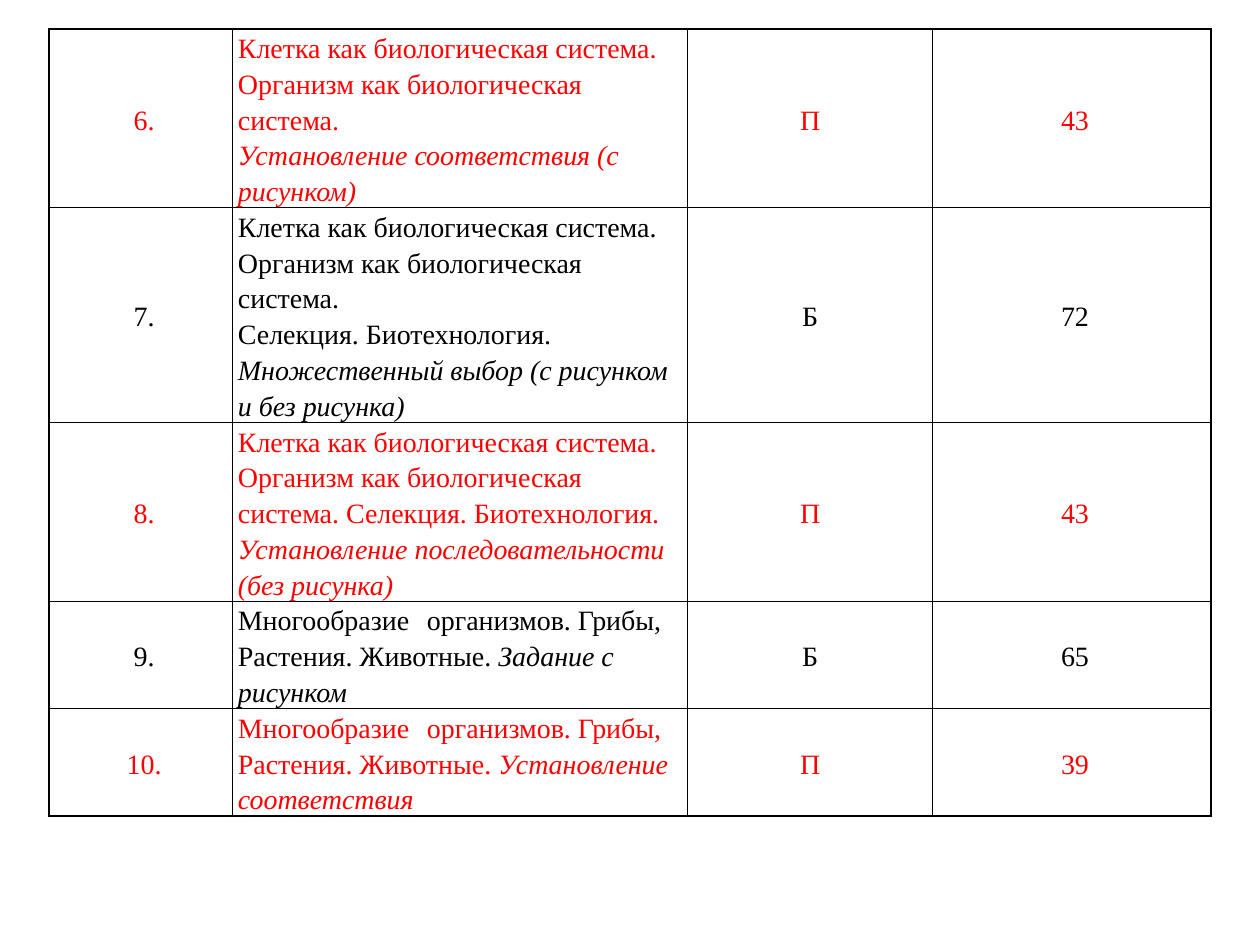
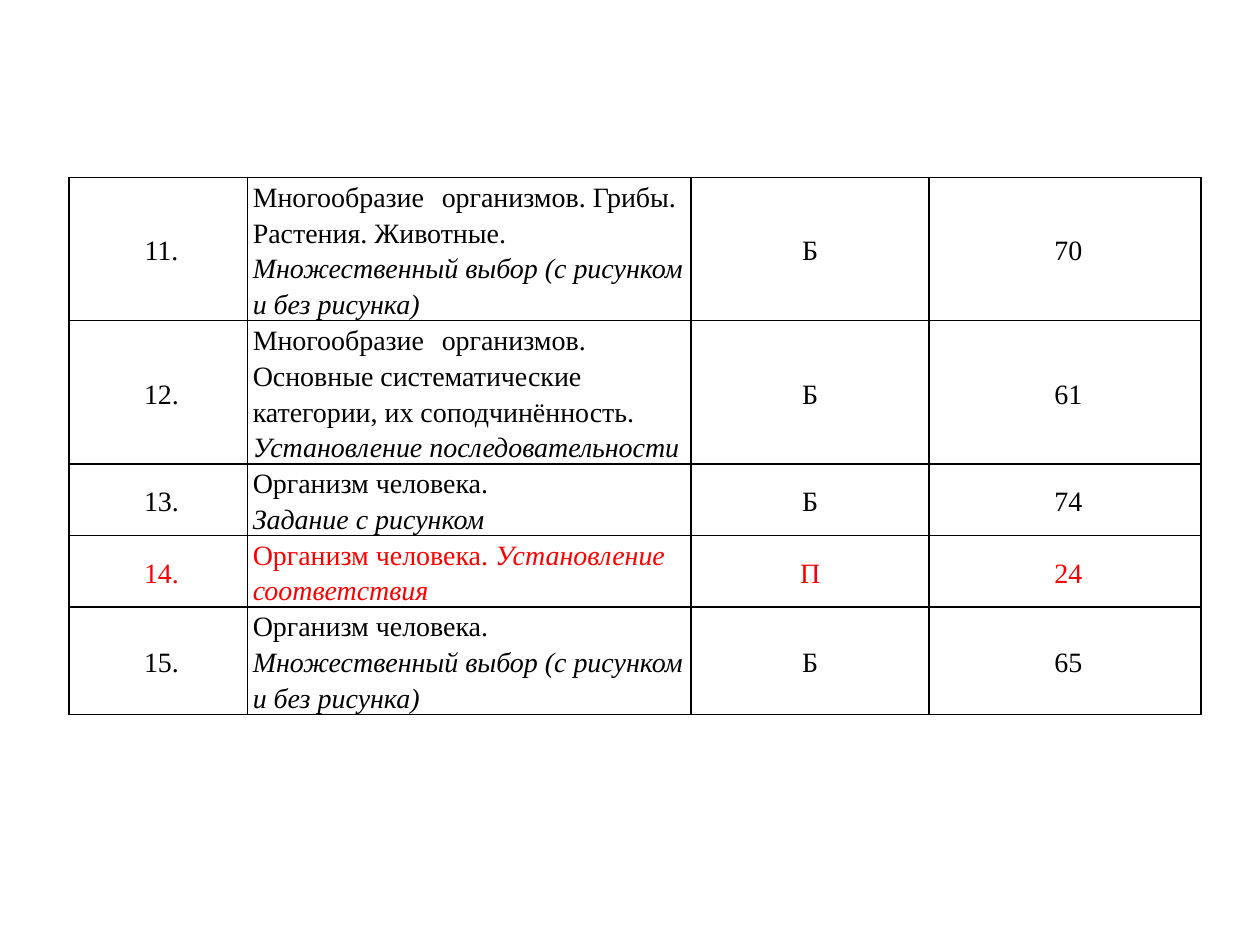
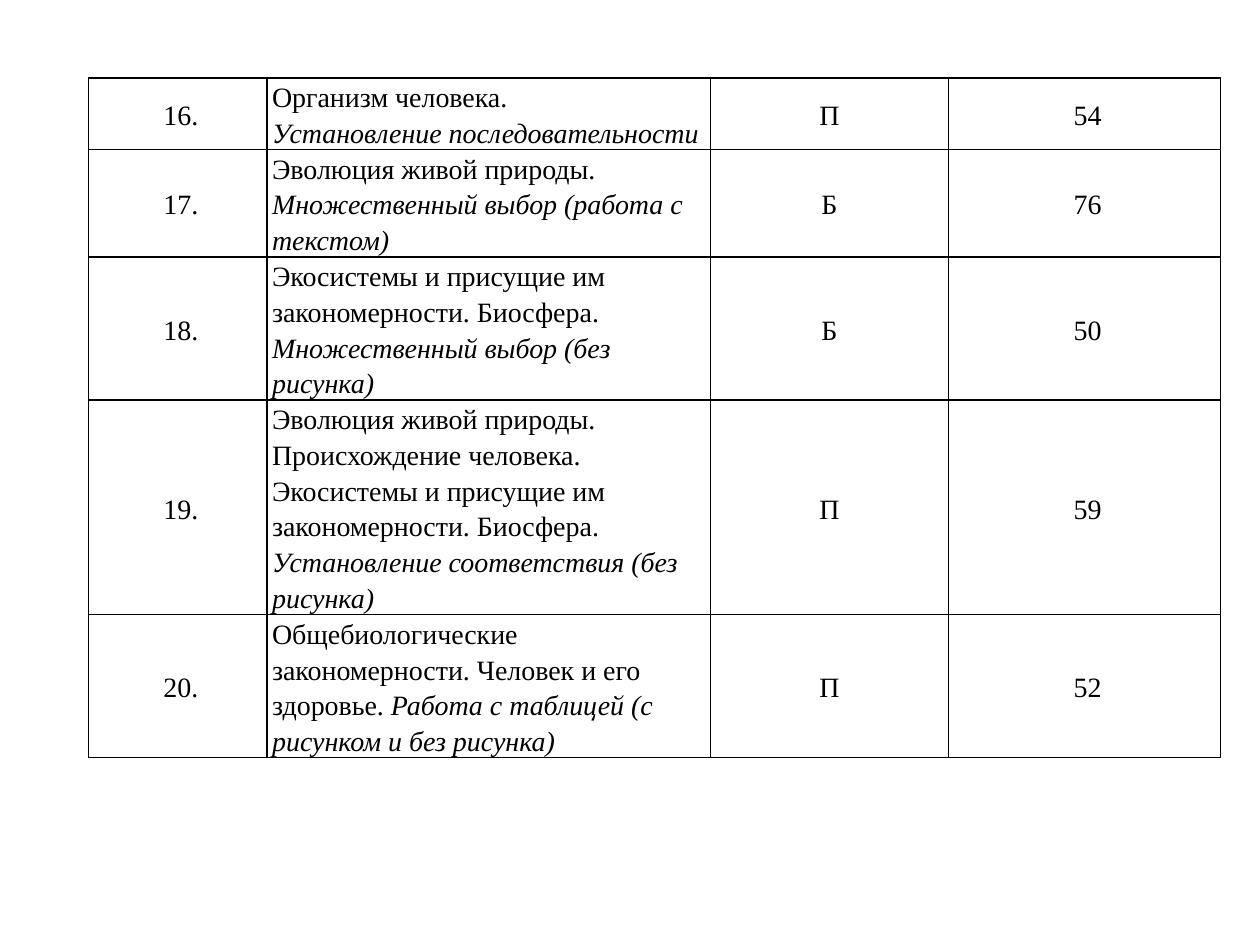
"""Build three slides of exam task results as tables."""
from dataclasses import dataclass

from lxml import etree
from pptx import Presentation
from pptx.dml.color import RGBColor
from pptx.enum.text import MSO_ANCHOR, PP_ALIGN
from pptx.oxml.ns import qn
from pptx.util import Pt

CENTER = PP_ALIGN.CENTER
LEFT = PP_ALIGN.LEFT
MIDDLE = MSO_ANCHOR.MIDDLE


@dataclass(frozen=True)
class Theme:
    font: str = "Times New Roman"
    size: int = 16
    ink: str = "000000"
    alert: str = "FF0000"
    rule: str = "000000"
    line: float = 1
    space: float = 1.15
    inset: float = 3
    row: float = 15
    limit: int = 50


ALIGNS = (CENTER, LEFT, CENTER, CENTER)
INDENTS = (3.6, 0, -5.75, 3.6)
WIDE = (105, 260, 140, 159)
SLIM = (102, 253.5, 136, 155.5)

CELL = "Клетка как биологическая система. Организм как биологическая система."
KINDS = "Многообразие\tорганизмов. "
HUMAN = "Организм человека."
LIFE = "Эволюция живой природы."
ECO = "Экосистемы и присущие им закономерности. Биосфера."
CHOICE = "|Множественный выбор "
BOTH = CHOICE + "(с рисунком и без рисунка)"
MATCH = "|Установление соответствия"
ORDER = "|Установление последовательности"
IMAGE = "|Задание с рисунком"

PAGES = (
    ((28, 16.5), 480, WIDE, (
        (6, f"{CELL}\n{MATCH} (с рисунком)", "П", 43),
        (7, f"{CELL}\nСелекция. Биотехнология.\n{BOTH}", "Б", 72),
        (8, f"{CELL} Селекция. Биотехнология.\n{ORDER} (без рисунка)", "П", 43),
        (9, f"{KINDS}Грибы, Растения. Животные. {IMAGE}", "Б", 65),
        (10, f"{KINDS}Грибы, Растения. Животные. {MATCH}", "П", 39),
    )),
    ((39.5, 101.5), 330, SLIM, (
        (11, f"{KINDS}Грибы. Растения. Животные. {BOTH}", "Б", 70),
        (12, f"{KINDS}Основные систематические категории, "
             f"их соподчинённость. {ORDER}", "Б", 61),
        (13, f"{HUMAN}\n{IMAGE}", "Б", 74),
        (14, f"{HUMAN} {MATCH}", "П", 24),
        (15, f"{HUMAN}\n{BOTH}", "Б", 65),
    )),
    ((50.5, 44.5), 420, SLIM, (
        (16, f"{HUMAN}\n{ORDER}", "П", 54),
        (17, f"{LIFE}\n{CHOICE}(работа с текстом)", "Б", 76),
        (18, f"{ECO}\n{CHOICE}(без рисунка)", "Б", 50),
        (19, f"{LIFE} Происхождение человека. {ECO}\n{MATCH} (без рисунка)",
         "П", 59),
        (20, "Общебиологические закономерности. Человек и его здоровье. "
             "|Работа с таблицей (с рисунком и без рисунка)", "П", 52),
    )),
)


class Deck:
    """Hold the style and the current slide."""

    def __init__(self, theme):
        self.theme = theme
        self.prs = Presentation()
        self.prs.slide_width, self.prs.slide_height = Pt(720), Pt(540)
        self.slide = None

    def page(self):
        """Start a blank slide."""
        self.slide = self.prs.slides.add_slide(self.prs.slide_layouts[6])

    def table(self, spot, height, widths, rows):
        """Add a table of tasks, with weak results in the alert colour."""
        left, top = spot
        frame = self.slide.shapes.add_table(
            len(rows), len(widths), Pt(left), Pt(top),
            Pt(sum(widths)), Pt(height))
        grid = frame.table
        grid.first_row = grid.horz_banding = False
        for col, width in zip(grid.columns, widths):
            col.width = Pt(width)
        for row, (num, topic, level, rate) in zip(grid.rows, rows):
            row.height = Pt(self.theme.row)
            weak = rate < self.theme.limit
            color = self.theme.alert if weak else self.theme.ink
            texts = (f"{num}.", topic, level, str(rate))
            for cell, text, align, indent in zip(
                    row.cells, texts, ALIGNS, INDENTS):
                self.frame(cell)
                self.label(cell, text, color, align, indent)
        frame.height = Pt(height)

    def frame(self, cell):
        """Set the margins, borders and fill of a cell."""
        cell.margin_left = cell.margin_right = Pt(self.theme.inset)
        cell.margin_top = cell.margin_bottom = 0
        cell.vertical_anchor = MIDDLE
        props = cell._tc.get_or_add_tcPr()
        for side in ("a:lnL", "a:lnR", "a:lnT", "a:lnB"):
            edge = etree.SubElement(props, qn(side), w=str(Pt(self.theme.line)))
            fill = etree.SubElement(edge, qn("a:solidFill"))
            etree.SubElement(fill, qn("a:srgbClr"), val=self.theme.rule)
        cell.fill.background()

    def label(self, cell, text, color, align, indent):
        """Put lines into a cell; the part after a bar is italic."""
        body = cell.text_frame
        for idx, line in enumerate(text.split("\n")):
            para = body.add_paragraph() if idx else body.paragraphs[0]
            para.alignment = align
            para.line_spacing = self.theme.space
            if indent:
                props = para._p.get_or_add_pPr()
                props.set("marL", "0")
                props.set("indent", str(Pt(indent)))
            for pos, part in enumerate(line.split("|")):
                if part:
                    run = para.add_run()
                    run.text = part
                    self.style(run.font, color, pos == 1)

    def style(self, font, color, italic):
        """Format the font of a run."""
        font.name = self.theme.font
        font.size = Pt(self.theme.size)
        font.italic = italic
        font.color.rgb = RGBColor.from_string(color)


def main():
    """Build and save the slides."""
    deck = Deck(Theme())
    for spot, height, widths, rows in PAGES:
        deck.page()
        deck.table(spot, height, widths, rows)
    deck.prs.save("out.pptx")


if __name__ == "__main__":
    main()
